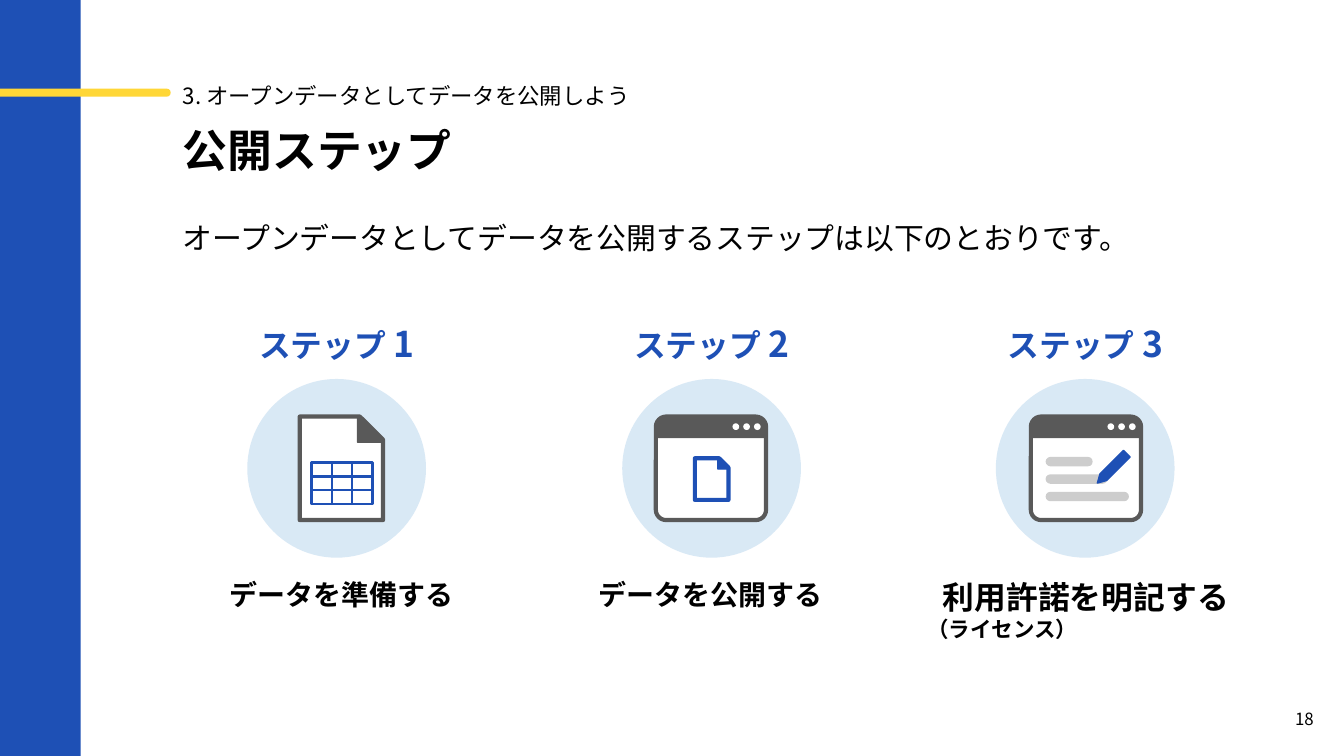
from lxml.etree import SubElement
from pptx import Presentation
from pptx.dml.color import RGBColor
from pptx.enum.shapes import MSO_CONNECTOR, MSO_SHAPE as Shape
from pptx.enum.text import MSO_ANCHOR as Anchor, MSO_AUTO_SIZE as AutoSize, PP_ALIGN as Align
from pptx.oxml.ns import qn
from pptx.util import Inches, Pt

FONT = "Noto Sans CJK JP"
WIDTH = 10
HEIGHT = WIDTH * 9 / 16
COLORS = {
    "blue": "1E50B5",
    "yellow": "FFD737",
    "sky": "0070C0",
    "dark": "595959",
    "gray": "CDCDCD",
    "white": "FFFFFF",
    "black": "000000",
}


def rgb(name):
    """Look up a palette colour."""
    return RGBColor.from_string(COLORS[name])


def draw(shapes, kind, box, fill=None, line=None, width=0.75, adjust=(), alpha=None):
    """Add a preset shape in a box of inches."""
    shape = shapes.add_shape(kind, *map(Inches, box))
    shape.shadow.inherit = False
    for index, value in enumerate(adjust):
        shape.adjustments[index] = value
    if fill:
        shape.fill.solid()
        shape.fill.fore_color.rgb = rgb(fill)
        if alpha:
            tint = shape.fill._xPr.find(qn("a:solidFill"))[0]
            SubElement(tint, qn("a:alpha"), val=str(alpha * 1000))
    else:
        shape.fill.background()
    if line:
        shape.line.color.rgb = rgb(line)
        shape.line.width = Pt(width)
    else:
        shape.line.fill.background()
    return shape


def draw_rule(shapes, start, end):
    """Add a straight blue table rule between two points."""
    rule = shapes.add_connector(MSO_CONNECTOR.STRAIGHT, *map(Inches, start + end))
    rule.line.color.rgb = rgb("blue")
    rule.line.width = Pt(1.5)
    SubElement(rule._element.spPr, qn("a:effectLst"))


def write(holder, box, paragraphs, color="black", bold=False, anchor=Anchor.TOP, spacing=1.0):
    """Place a text holder and fill it with (alignment, runs) paragraphs."""
    holder.left, holder.top, holder.width, holder.height = map(Inches, box)
    frame = holder.text_frame
    frame.margin_left = frame.margin_right = frame.margin_top = frame.margin_bottom = 0
    frame.word_wrap = True
    frame.auto_size = AutoSize.NONE
    frame.vertical_anchor = anchor
    for index, (align, runs) in enumerate(paragraphs):
        paragraph = frame.add_paragraph() if index else frame.paragraphs[0]
        properties = paragraph._p.get_or_add_pPr()
        properties.set("marL", "0")
        properties.set("indent", "0")
        SubElement(properties, qn("a:buNone"))
        paragraph.alignment = align
        paragraph.line_spacing = spacing
        paragraph.space_before = Pt(0)
        for text, size in runs:
            run = paragraph.add_run()
            run.text = text
            run.font.size = Pt(size)
            run.font.bold = bold
            run.font.color.rgb = rgb(color)
            run.font.name = FONT
            SubElement(run._r.get_or_add_rPr(), qn("a:ea"), typeface=FONT)


def write_box(slide, box, paragraphs, **style):
    """Add a text box with the given paragraphs."""
    write(slide.shapes.add_textbox(0, 0, 0, 0), box, paragraphs, **style)


def add_frame(slide, height):
    """Draw the side band, the accent bar and the page number."""
    draw(slide.shapes, Shape.RECTANGLE, (0, 0, 0.6, height), "blue")
    draw(slide.shapes, Shape.ROUNDED_RECTANGLE, (-0.11, 0.66, 1.38, 0.06), "yellow", adjust=[0.5])
    write_box(slide, (9.49, height - 0.49, 0.43, 0.43), [(Align.CENTER, [("18", 9)])],
              anchor=Anchor.MIDDLE)


def add_heading(slide, left, top, width):
    """Fill the chapter line, the title and the lead sentence."""
    chapter = [(Align.LEFT, [("3. オープンデータとしてデータを公開しよう", 12)])]
    title = [(Align.LEFT, [("公開ステップ", 24)])]
    lead = [(Align.LEFT, [("オープンデータとしてデータを公開するステップは以下のとおりです。", 16)])]
    write_box(slide, (left, top, width, 0.27), chapter, anchor=Anchor.MIDDLE, spacing=1.25)
    write(slide.shapes.title, (left, top + 0.36, width, 0.4), title, bold=True)
    write(slide.placeholders[1], (left, top + 1.02, width, 0.34), lead, spacing=1.25)


def draw_folded_page(shapes, box, fold, color):
    """Draw a page outline with its top right corner folded."""
    x, y, w, h = box
    draw(shapes, Shape.SNIP_1_RECTANGLE, box, "white", color, 2.25, [0.278])
    draw(shapes, Shape.RIGHT_TRIANGLE, (x + w - fold, y, fold, fold), color, color)


def draw_window(shapes, x, y):
    """Draw a browser window with three buttons."""
    draw(shapes, Shape.ROUNDED_RECTANGLE, (x, y, 0.82, 0.77), "white", "dark", 2.25, [0.099])
    draw(shapes, Shape.ROUND_2_SAME_RECTANGLE, (x, y, 0.82, 0.16), "dark", adjust=[0.458, 0])
    for button in range(3):
        draw(shapes, Shape.OVAL, (x + 0.57 + 0.08 * button, y + 0.05, 0.05, 0.05), "white")


def draw_data_icon(shapes, x, y):
    """Draw a page holding a three by three table."""
    draw_folded_page(shapes, (x + 0.39, y, 0.62, 0.77), 0.19, "dark")
    left, top, width, height = x + 0.48, y + 0.34, 0.45, 0.31
    for part in (1, 2):
        row = top + height * part / 3
        column = left + width * part / 3
        draw_rule(shapes, (left, row), (left + width, row))
        draw_rule(shapes, (column, top), (column, top + height))
    draw(shapes, Shape.RECTANGLE, (left, top, width, height), line="blue", width=1.5)


def draw_publish_icon(shapes, x, y):
    """Draw a window showing a page."""
    draw_window(shapes, x + 0.25, y)
    draw_folded_page(shapes, (x + 0.54, y + 0.31, 0.25, 0.31), 0.08, "blue")


def draw_license_icon(shapes, x, y):
    """Draw a window with text lines and a pen."""
    draw_window(shapes, x + 0.26, y)
    for row, length in enumerate((0.35, 0.46, 0.62)):
        draw(shapes, Shape.ROUNDED_RECTANGLE, (x + 0.37, y + 0.3 + 0.13 * row, length, 0.07),
             "gray", adjust=[0.5])
    pen = draw(shapes, Shape.FLOWCHART_OFFPAGE_CONNECTOR, (x + 0.83, y + 0.23, 0.07, 0.31),
               "blue", "blue")
    pen.rotation = 45


def add_step(slide, left, top, number, draw_icon, caption_left, caption):
    """Place one step: label, circle with icon, and caption."""
    size = 1.33
    draw(slide.shapes, Shape.OVAL, (left, top + 0.42, size, size), "sky", alpha=15)
    draw_icon(slide.shapes.add_group_shape().shapes, left, top + 0.7)
    label = [(Align.CENTER, [("ステップ ", 17), (str(number), 19)])]
    write_box(slide, (left + 0.01, top, 1.31, 0.32), label, color="blue", bold=True)
    write_box(slide, (caption_left, top + 1.9, 2.36, 0.25 * len(caption)), caption, bold=True)


def main():
    """Build and save the slide."""
    deck = Presentation()
    deck.slide_width, deck.slide_height = Inches(WIDTH), Inches(HEIGHT)
    slide = deck.slides.add_slide(deck.slide_layouts[1])
    add_frame(slide, HEIGHT)
    add_heading(slide, 1.36, 0.55, 7.87)
    steps = [
        (1.84, draw_data_icon, 1.36, [(Align.CENTER, [("データを準備する", 15)])]),
        (4.63, draw_publish_icon, 4.11, [(Align.CENTER, [("データを公開する", 15)])]),
        (7.41, draw_license_icon, 6.9, [(Align.CENTER, [("利用許諾を明記する", 17)]),
                                        (Align.LEFT, [("（ライセンス）", 11.5)])]),
    ]
    for number, (left, *content) in enumerate(steps, 1):
        add_step(slide, left, 2.4, number, *content)
    deck.save("out.pptx")


if __name__ == "__main__":
    main()
